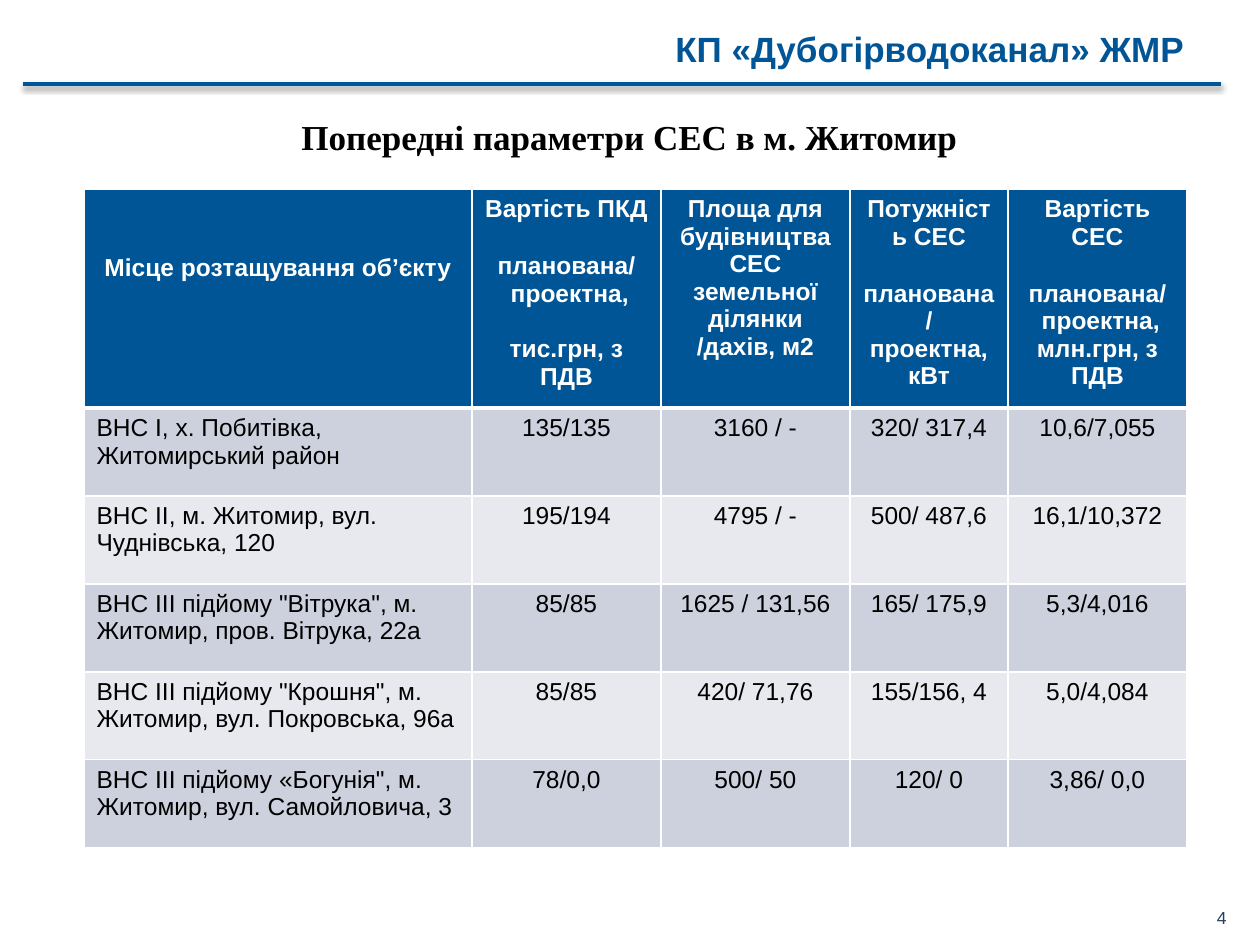
"""Build the slide on planned solar plants with its header rule and table."""
from dataclasses import dataclass

from lxml.etree import SubElement
from pptx import Presentation
from pptx.dml.color import RGBColor as Rgb
from pptx.enum.shapes import MSO_CONNECTOR as Link
from pptx.enum.text import MSO_ANCHOR as Anchor, MSO_AUTO_SIZE as Fit, PP_ALIGN as Align
from pptx.oxml.ns import qn
from pptx.util import Emu, Pt

SCALE = 914400 / 126
HUES = {"blue": "005596", "navy": "254061", "white": "FFFFFF",
        "black": "000000", "dark": "CCD1DD", "light": "E7E9EF"}
WIDTHS = [388, 189, 189, 158, 179]
HEAD, ROW = 215, 88


@dataclass
class Box:
    x: int
    y: int
    w: int
    h: int

    def emu(self) -> list[Emu]:
        return [px(n) for n in (self.x, self.y, self.w, self.h)]


@dataclass
class Line:
    text: str
    gap: int = 0


@dataclass
class Site:
    place: str
    plan: str
    area: str
    power: str
    cost: str

    def cells(self) -> list[str]:
        return [self.place, self.plan, self.area, self.power, self.cost]


HEADS = [
    [Line("Місце розтащування об’єкту")],
    [Line("Вартість ПКД"), Line("планована/", 17), Line(" проектна,"),
     Line("тис.грн, з ПДВ", 16)],
    [Line("Площа для"), Line("будівництва СЕС"),
     Line("земельної ділянки /дахів, м2")],
    [Line("Потужність СЕС"), Line("планована/", 17), Line(" проектна, "),
     Line("кВт")],
    [Line("Вартість СЕС"), Line("планована/", 17),
     Line(" проектна, млн.грн, з ПДВ")],
]
SITES = [
    Site("ВНС І, х. Побитівка, Житомирський район",
         "135/135", "3160 / -", "320/ 317,4", "10,6/7,055"),
    Site("ВНС ІІ, м. Житомир, вул. Чуднівська, 120",
         "195/194", "4795 / -", "500/ 487,6", "16,1/10,372"),
    Site('ВНС ІІІ підйому "Вітрука", м. Житомир, пров. Вітрука, 22а',
         "85/85", "1625 / 131,56", "165/ 175,9", "5,3/4,016"),
    Site('ВНС ІІІ підйому "Крошня", м. Житомир, вул. Покровська, 96а',
         "85/85", "420/ 71,76", "155/156, 4", "5,0/4,084"),
    Site('ВНС ІІІ підйому «Богунія", м. Житомир, вул. Самойловича, 3',
         "78/0,0", "500/ 50", "120/ 0", "3,86/ 0,0"),
]


def px(n: int) -> Emu:
    return Emu(round(n * SCALE))


def hue(name: str) -> Rgb:
    return Rgb.from_string(HUES[name])


def write(frame, lines: list[Line], *, size: int = 14, font: str = "Arial",
          color: str = "black", bold: bool = False, align=Align.LEFT) -> None:
    for i, line in enumerate(lines):
        para = frame.add_paragraph() if i else frame.paragraphs[0]
        para.alignment = align
        if line.gap:
            para.space_before = Pt(line.gap)
        run = para.add_run()
        run.text = line.text
        run.font.size, run.font.name = Pt(size), font
        run.font.bold = bold
        run.font.color.rgb = hue(color)


def label(slide, box: Box, text: str, wrap: bool = True, **form) -> None:
    frame = slide.shapes.add_textbox(*box.emu()).text_frame
    frame.word_wrap = wrap
    frame.auto_size = Fit.NONE if wrap else Fit.SHAPE_TO_FIT_TEXT
    write(frame, [Line(text)], **form)


def rule(slide, x: int, y: int, end: int) -> None:
    line = slide.shapes.add_connector(Link.STRAIGHT, px(x), px(y), px(end), px(y))
    line.line.color.rgb = hue("blue")
    line.line.width = Pt(2)
    props = line._element.spPr
    shade = SubElement(SubElement(props, qn("a:effectLst")), qn("a:outerShdw"),
                       blurRad="40000", dist="20000", dir="5400000", rotWithShape="0")
    tint = SubElement(shade, qn("a:srgbClr"), val=HUES["black"])
    SubElement(tint, qn("a:alpha"), val="38000")


def style(cell, fill: str, top: int = 1, base: int = 1) -> None:
    props = cell._tc.get_or_add_tcPr()
    for side, width in zip("LRTB", (1, 1, top, base)):
        edge = SubElement(props, qn(f"a:ln{side}"), w=str(Pt(width)))
        paint = SubElement(edge, qn("a:solidFill"))
        SubElement(paint, qn("a:srgbClr"), val=HUES["white"])
    cell.fill.solid()
    cell.fill.fore_color.rgb = hue(fill)


def table(slide, x: int, y: int) -> None:
    box = Box(x, y, sum(WIDTHS), HEAD + ROW * len(SITES))
    grid = slide.shapes.add_table(len(SITES) + 1, len(WIDTHS), *box.emu()).table
    for col, width in zip(grid.columns, WIDTHS):
        col.width = px(width)
    for i, row in enumerate(grid.rows):
        row.height = px(ROW if i else HEAD)
    for i, lines in enumerate(HEADS):
        cell = grid.cell(0, i)
        style(cell, "blue", base=3)
        write(cell.text_frame, lines, color="white", bold=True, align=Align.CENTER)
    grid.cell(0, 0).margin_top = px(65)
    for i, site in enumerate(SITES, 1):
        for j, text in enumerate(site.cells()):
            cell = grid.cell(i, j)
            style(cell, "dark" if i % 2 else "light", top=3 if i == 1 else 1)
            write(cell.text_frame, [Line(text)],
                  align=Align.CENTER if j else Align.LEFT)


def main() -> None:
    deck = Presentation()
    deck.slide_width, deck.slide_height = px(1260), px(945)
    slide = deck.slides.add_slide(deck.slide_layouts[5])
    label(slide, Box(945, 901, 294, 66), "4", size=10, color="navy",
          align=Align.RIGHT)
    rule(slide, 23, 84, 1221)
    label(slide, Box(663, 21, 564, 55), "КП «Дубогірводоканал» ЖМР",
          wrap=False, size=20, color="blue", bold=True)
    title = slide.shapes.title
    title.left, title.top, title.width, title.height = Box(10, 10, 1239, 252).emu()
    frame = title.text_frame
    frame.auto_size, frame.vertical_anchor = Fit.NONE, Anchor.MIDDLE
    write(frame, [Line("Попередні параметри СЕС в м. Житомир")], size=20,
          font="Times New Roman", bold=True, align=Align.CENTER)
    table(slide, 84, 189)
    deck.save("out.pptx")


if __name__ == "__main__":
    main()
